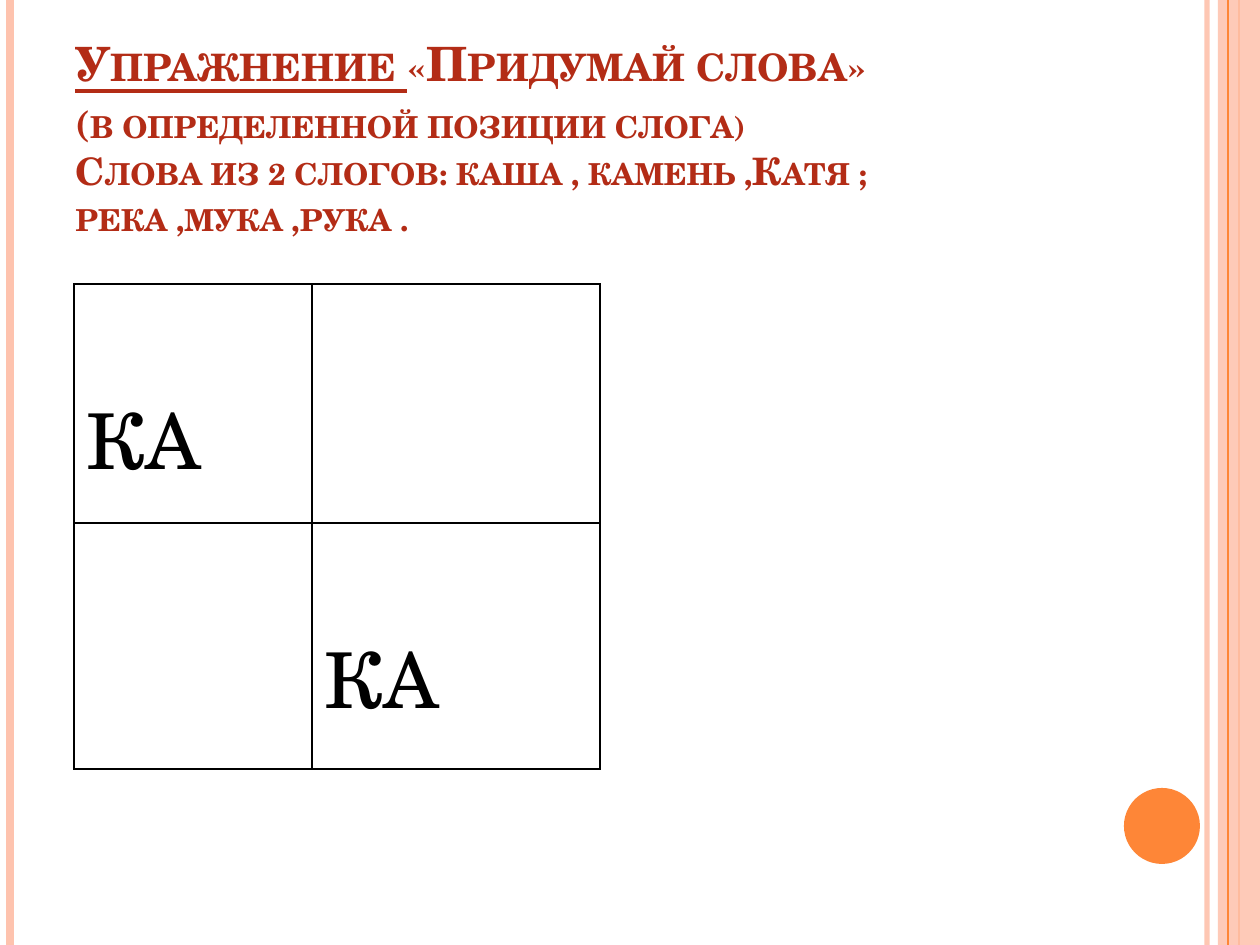
from dataclasses import dataclass

from lxml.etree import SubElement
from pptx import Presentation
from pptx.dml.color import RGBColor as RGB
from pptx.enum.shapes import MSO_CONNECTOR as CONNECTOR, MSO_SHAPE as SHAPE
from pptx.enum.text import MSO_ANCHOR as ANCHOR
from pptx.oxml import parse_xml
from pptx.oxml.ns import nsdecls, qn
from pptx.util import Emu, Pt

EMU_PER_PX = 914400 / 126


@dataclass(frozen=True)
class Theme:
    """Colours, font and type sizes of the slide."""
    font: str = "TeX Gyre Schola"
    pale: RGB = RGB.from_string("FEC3AE")
    orange: RGB = RGB.from_string("FE8637")
    heading: RGB = RGB.from_string("B32C16")
    ink: RGB = RGB.from_string("000000")
    title_size: float = 27
    rule_size: float = 21.6
    syllable_size: float = 44


THEME = Theme()


def px(length):
    """Turn px into EMU."""
    return Emu(round(length * EMU_PER_PX))


def set_opacity(fill_parent, percent):
    """Make the solid colour under an element partly transparent."""
    colour = next(fill_parent.iter(qn("a:srgbClr")))
    SubElement(colour, qn("a:alpha")).set("val", str(percent * 1000))


def style_run(run, size, colour):
    """Give a run the slide's font, a size and a colour."""
    run.font.name = THEME.font
    run.font.size = Pt(size)
    run.font.color.rgb = colour


def add_stripe(slide, x, top, height, colour, width, opacity=100):
    """Draw one vertical stripe."""
    stripe = slide.shapes.add_connector(
        CONNECTOR.STRAIGHT, px(x), px(top), px(x), px(top + height))
    stripe.line.color.rgb = colour
    stripe.line.width = Pt(width)
    properties = stripe._element.spPr
    if opacity < 100:
        set_opacity(properties, opacity)
    SubElement(properties, qn("a:effectLst"))


def add_solid(slide, kind, left, top, width, height, colour):
    """Draw a filled shape without outline or shadow."""
    solid = slide.shapes.add_shape(kind, px(left), px(top), px(width), px(height))
    solid.shadow.inherit = False
    solid.fill.solid()
    solid.fill.fore_color.rgb = colour
    solid.line.fill.background()
    return solid


def add_decoration(slide, left, top, width, height):
    """Draw the edge stripes, the right band and the circle."""
    right = left + width
    add_stripe(slide, right - 53, top, height, THEME.pale, 3, 93)
    add_stripe(slide, left + 10, top, height, THEME.pale, 4.5)
    add_stripe(slide, right - 21, top, height, THEME.orange, 1.5)
    band = add_solid(slide, SHAPE.RECTANGLE, right - 42, top, 42, height, THEME.pale)
    set_opacity(band._element.spPr, 87)
    add_stripe(slide, right - 32, top, height, THEME.orange, 0.75)
    add_solid(slide, SHAPE.OVAL, right - 136, top + height - 157, 76, 76, THEME.orange)


def add_title(slide, left, top, width, height):
    """Write the exercise heading in small capitals."""
    big, small = THEME.title_size, THEME.rule_size
    lines = [
        [("Упражнение ", big, True), ("«Придумай слова»", big, False)],
        [("(", big, False), ("в определенной позиции слога)", small, False)],
        [("Слова из 2 слогов: каша , камень ,Катя ;", small, False)],
        [("река ,мука ,рука .", small, False)],
    ]
    frame = slide.shapes.add_textbox(px(left), px(top), px(width), px(height)).text_frame
    frame.word_wrap = True
    frame.vertical_anchor = ANCHOR.BOTTOM
    heading = frame.paragraphs[0]
    for number, line in enumerate(lines):
        if number:
            heading.add_line_break()
        for text, size, underlined in line:
            run = heading.add_run()
            run.text = text
            style_run(run, size, THEME.heading)
            run.font.bold = True
            run.font.underline = underlined
            run.font._element.set("cap", "small")


def style_cell(cell):
    """Clear a cell's fill and give it thin borders on all sides."""
    properties = cell._tc.get_or_add_tcPr()
    for side in ("lnL", "lnR", "lnT", "lnB"):
        properties.append(parse_xml(
            f'<a:{side} {nsdecls("a")} w="{Pt(1)}"><a:solidFill>'
            f'<a:srgbClr val="{THEME.ink}"/></a:solidFill></a:{side}>'))
    cell.fill.background()


def add_syllable_grid(slide, left, top, columns, rows):
    """Place the syllable in its position for each kind of word."""
    syllables = [["КА", ""], ["", "КА"]]
    grid = slide.shapes.add_table(
        len(rows), len(columns), px(left), px(top), px(sum(columns)), px(sum(rows))).table
    for column, width in zip(grid.columns, columns):
        column.width = px(width)
    for row, height, texts in zip(grid.rows, rows, syllables):
        row.height = px(height)
        for cell, text in zip(row.cells, texts):
            style_cell(cell)
            if text:
                cell.margin_top = px(98)
                cell.text_frame.text = text
                style_run(cell.text_frame.paragraphs[0].runs[0],
                          THEME.syllable_size, THEME.ink)
                cell.text_frame.paragraphs[0].runs[0].font.bold = False


def main():
    """Build and save the slide."""
    deck = Presentation()
    deck.slide_width, deck.slide_height = px(1260), px(945)
    slide = deck.slides.add_slide(deck.slide_layouts[6])
    add_decoration(slide, 0, 0, 1260, 945)
    add_title(slide, 63, 76, 1029, 169)
    add_syllable_grid(slide, 74, 284, (238, 288), (239, 246))
    deck.save("out.pptx")


if __name__ == "__main__":
    main()
